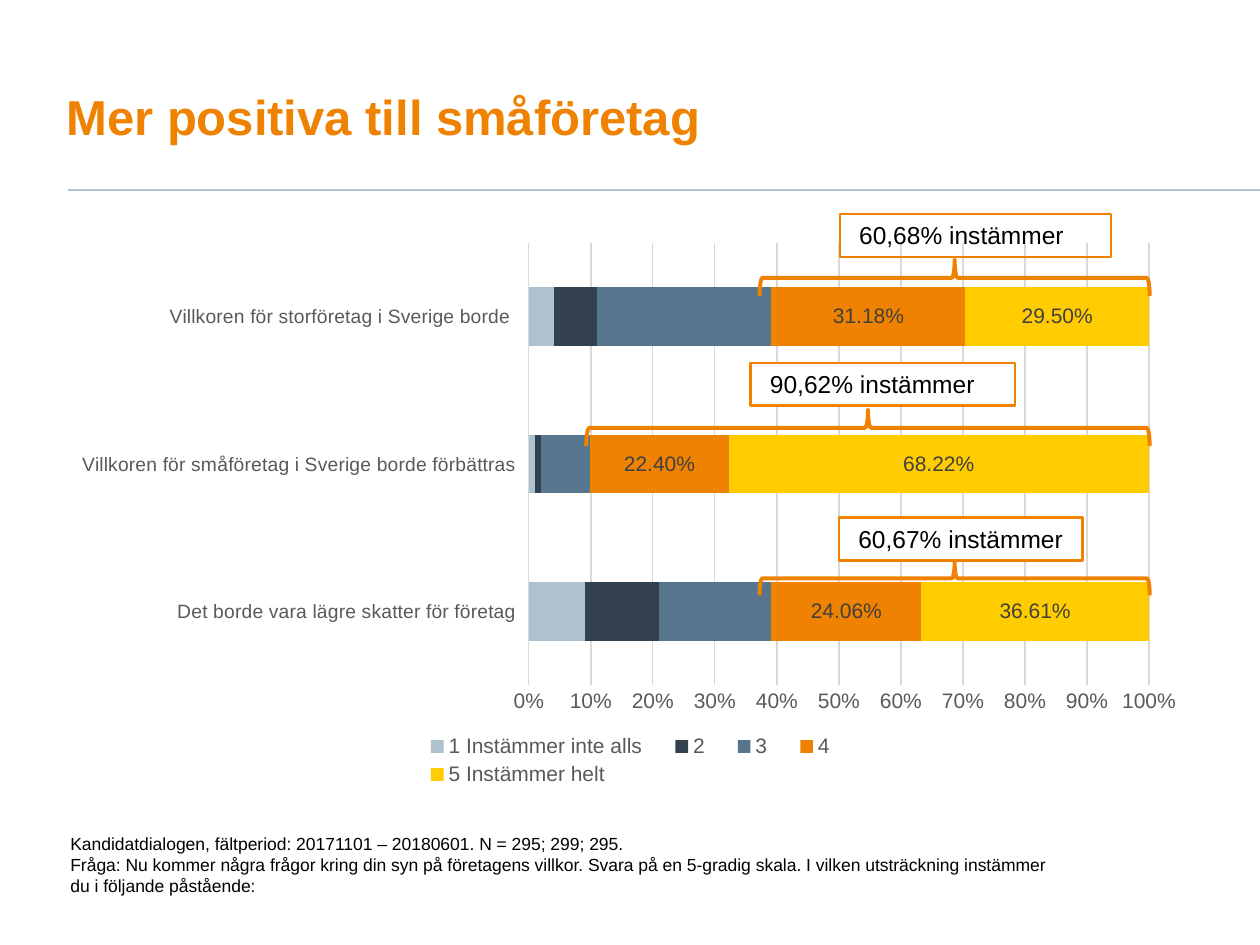
from lxml.etree import SubElement
from pptx import Presentation
from pptx.chart.data import CategoryChartData
from pptx.dml.color import RGBColor
from pptx.enum.chart import XL_CHART_TYPE as ChartType, XL_LEGEND_POSITION as LegendPosition
from pptx.enum.chart import XL_TICK_LABEL_POSITION as LabelPosition, XL_TICK_MARK as TickMark
from pptx.enum.shapes import MSO_CONNECTOR as Connector, MSO_SHAPE as Shape
from pptx.enum.text import MSO_ANCHOR as Anchor, PP_ALIGN as Align
from pptx.oxml import parse_xml
from pptx.oxml.ns import nsdecls, qn
from pptx.util import Pt

COLORS = {
    "orange": "EF8200", "yellow": "FFCC00", "pale": "AEC1CF", "dark": "33414E",
    "steel": "57758D", "grid": "D9D9D9", "axis": "595959", "label": "404040",
    "black": "000000", "white": "FFFFFF",
}


def rgb(name):
    return RGBColor.from_string(COLORS[name])


def write(frame, *lines, size, color="black", bold=False, anchor=Anchor.TOP,
          margins=(7.2, 3.6, 7.2, 3.6), spacing=1.0):
    """Fill a text frame, one paragraph a line; margins are left, top, right, bottom."""
    frame.word_wrap = True
    frame.vertical_anchor = anchor
    frame.margin_left, frame.margin_top, frame.margin_right, frame.margin_bottom = map(Pt, margins)
    frame.text = "\n".join(lines)
    for paragraph in frame.paragraphs:
        paragraph.alignment = Align.LEFT
        paragraph.line_spacing = spacing
        font = paragraph.font
        font.name, font.size, font.bold = "Arial", Pt(size), bold
        font.color.rgb = rgb(color)


prs = Presentation()
prs.slide_width, prs.slide_height = Pt(720), Pt(540)
slide = prs.slides.add_slide(prs.slide_layouts[5])

# Title and rule
title = slide.shapes.title
title.left, title.top, title.width, title.height = Pt(38), Pt(22.3), Pt(515.5), Pt(64.8)
write(title.text_frame, "Mer positiva till småföretag", size=28, color="orange", bold=True,
      anchor=Anchor.BOTTOM, margins=(0, 0, 7.2, 3.6), spacing=0.9)

rule = slide.shapes.add_connector(Connector.STRAIGHT, Pt(38.9), Pt(108.5), Pt(720), Pt(108.5))
rule.line.color.rgb = rgb("pale")
rule.line.width = Pt(1)
SubElement(rule._element.spPr, qn("a:effectLst"))

# Chart: name, values, colour, whether the values are shown
answers = [
    ("1 Instämmer inte alls", (0.09, 0.01, 0.04), "pale", False),
    ("2", (0.12, 0.01, 0.07), "dark", False),
    ("3", (0.18, 0.08, 0.28), "steel", False),
    ("4", (0.2406, 0.224, 0.3118), "orange", True),
    ("5 Instämmer helt", (0.3661, 0.6822, 0.295), "yellow", True),
]
data = CategoryChartData(number_format="0.00%")
data.categories = [
    "Det borde vara lägre skatter för företag",
    "Villkoren för småföretag i Sverige borde förbättras",
    "Villkoren för storföretag i Sverige borde ",
]
for name, values, _, _ in answers:
    data.add_series(name, values)
chart = slide.shapes.add_chart(ChartType.BAR_STACKED_100, Pt(38), Pt(132.5),
                               Pt(644.4), Pt(319.7), data).chart
chart.has_title = False
chart.font.name, chart.font.size = "Arial", Pt(10)

plot = chart.plots[0]
plot.gap_width, plot.overlap, plot.vary_by_categories = 150, 100, False
for series, (_, _, color, labelled) in zip(plot.series, answers):
    series.format.fill.solid()
    series.format.fill.fore_color.rgb = rgb(color)
    if labelled:
        labels = series.data_labels
        labels.show_value = True
        labels.number_format, labels.number_format_is_linked = "0.00%", False
        labels.font.name, labels.font.size = "Arial", Pt(12)
        labels.font.color.rgb = rgb("label")

statements, shares = chart.category_axis, chart.value_axis
for axis, size in ((statements, 11), (shares, 12)):
    axis.major_tick_mark = axis.minor_tick_mark = TickMark.NONE
    axis.tick_labels.font.name, axis.tick_labels.font.size = "Arial", Pt(size)
    axis.tick_labels.font.color.rgb = rgb("axis")
statements.tick_label_position = LabelPosition.LOW
shares.minimum_scale, shares.maximum_scale, shares.major_unit = 0, 1, 0.1
shares.tick_labels.number_format, shares.tick_labels.number_format_is_linked = "0%", False
shares.has_major_gridlines = True
shares.format.line.fill.background()
for line in (statements.format.line, shares.major_gridlines.format.line):
    line.color.rgb = rgb("grid")
    line.width = Pt(0.75)

chart.has_legend = True
legend = chart.legend
legend.position, legend.include_in_layout = LegendPosition.BOTTOM, False
legend.font.name, legend.font.size = "Arial", Pt(12)
legend.font.color.rgb = rgb("axis")

# Fixed places for the plot and the legend, as fractions of the chart
plot_area = chart._chartSpace.chart.plotArea
for parent, index, inner, box in (
    (plot_area, 0, '<c:layoutTarget val="inner"/>', (0.41, 0.02, 0.55, 0.79)),
    (legend._element, 1, "", (0.3, 0.89, 0.4, 0.11)),
):
    for old in parent.findall(qn("c:layout")):
        parent.remove(old)
    modes = '<c:xMode val="edge"/><c:yMode val="edge"/>'
    sizes = "".join(f'<c:{key} val="{value}"/>' for key, value in zip("xywh", box))
    parent.insert(index, parse_xml(f'<c:layout {nsdecls("c")}><c:manualLayout>{inner}{modes}'
                                   f'{sizes}</c:manualLayout></c:layout>'))

# Callouts: text, box (left, top, width), brace (left, top, height), whether the box is filled
BRACE_RIGHT = 657
callouts = [
    ("60,68% instämmer", (480, 122.4, 155), (434, 148.3, 20.9), False),
    ("90,62% instämmer", (429, 207.4, 151), (335, 234, 20.9), True),
    ("60,67% instämmer", (479.5, 295.9, 139), (434, 320.8, 19.4), True),
]
for text, (left, top, width), (brace_left, brace_top, depth), filled in callouts:
    group = slide.shapes.add_group_shape().shapes
    span = BRACE_RIGHT - brace_left
    # The brace is drawn upright and turned about its centre
    brace = group.add_shape(Shape.RIGHT_BRACE, Pt(brace_left + (span - depth) / 2),
                            Pt(brace_top - (span - depth) / 2), Pt(depth), Pt(span))
    brace.rotation = 270
    box = group.add_shape(Shape.RECTANGLE, Pt(left), Pt(top), Pt(width), Pt(24.5))
    for shape, weight in ((brace, 2.25), (box, 1.5)):
        shape.shadow.inherit = False
        shape.fill.background()
        shape.line.color.rgb = rgb("orange")
        shape.line.width = Pt(weight)
    if filled:
        box.fill.solid()
        box.fill.fore_color.rgb = rgb("white")
    write(box.text_frame, text, size=14, margins=(11, 3.6, 7.2, 3.6))

# Source note
note = slide.shapes.add_textbox(Pt(33.1), Pt(472.3), Pt(574.6), Pt(43.9))
write(note.text_frame,
      "Kandidatdialogen, fältperiod: 20171101 – 20180601. N = 295; 299; 295.",
      "Fråga: Nu kommer några frågor kring din syn på företagens villkor. Svara på en "
      "5-gradig skala. I vilken utsträckning instämmer du i följande påstående:", size=10)

prs.save("out.pptx")
